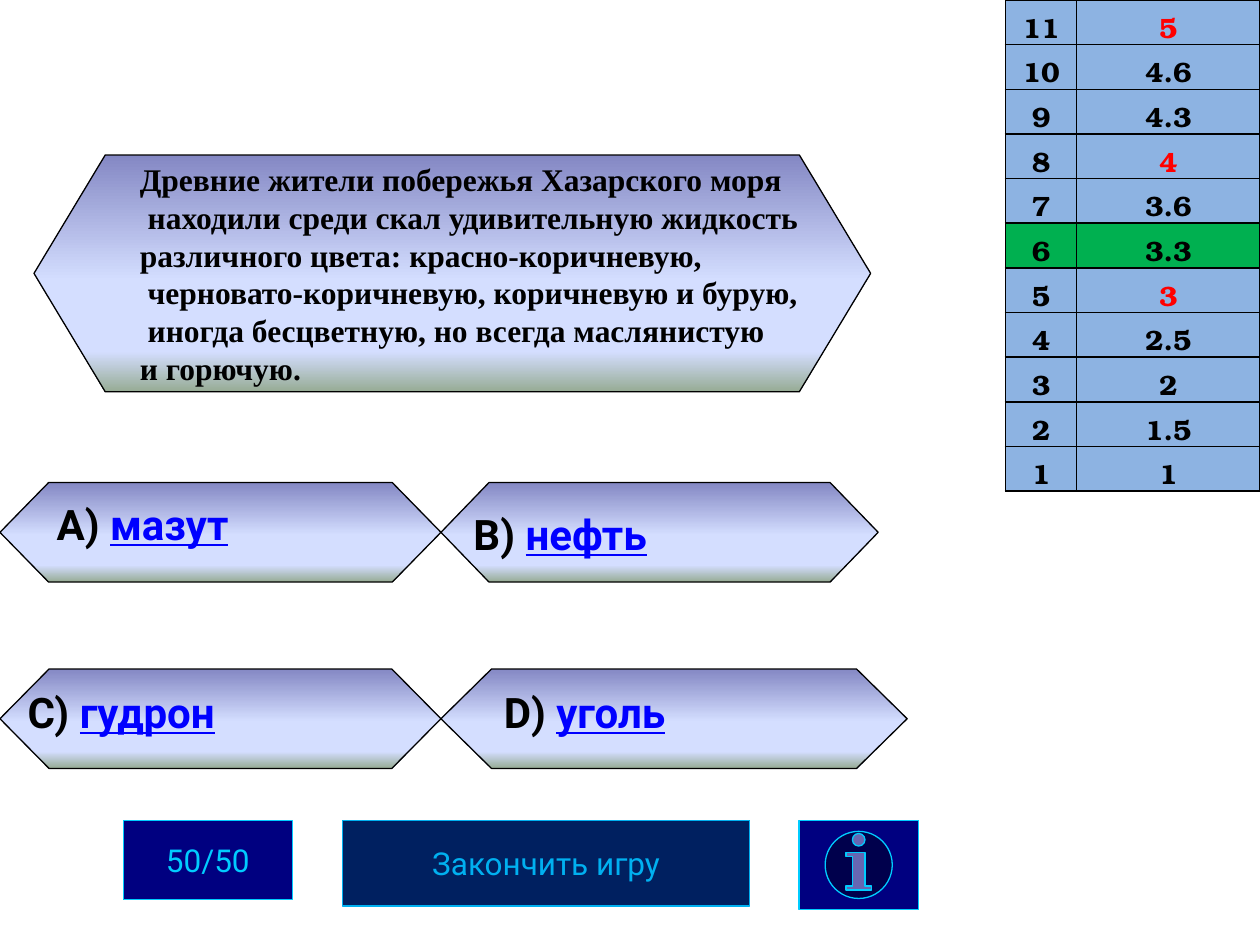
from lxml import etree
from pptx import Presentation
from pptx.dml.color import RGBColor
from pptx.enum.shapes import MSO_SHAPE as Shape
from pptx.enum.text import MSO_ANCHOR as Anchor, PP_ALIGN as Align
from pptx.oxml import parse_xml
from pptx.oxml.ns import nsdecls, qn
from pptx.util import Inches, Pt

WIDTH, HEIGHT = Inches(10), Inches(7.5)
BLACK, LINK, RED = "000000", "0000FF", "FF0000"
ROW_FILL, CURRENT_FILL = "8DB3E2", "00B050"
STOPS = [(0, "8488C4"), (53, "D4DEFF"), (83, "D4DEFF"), (100, "96AB94")]
QUESTION = [
    "Древние жители побережья Хазарского моря",
    " находили среди скал удивительную жидкость",
    "различного цвета: красно-коричневую,",
    " черновато-коричневую, коричневую и бурую,",
    " иногда бесцветную, но всегда маслянистую",
    "и горючую.",
]
SCORES = ["5", "4.6", "4.3", "4", "3.6", "3.3", "3", "2.5", "2", "1.5", "1"]
MILESTONES, CURRENT = {"5", "4", "3"}, "3.3"
ANSWERS = [
    ("А) ", "мазут", (0, 51.07, 35, 10.53), 0.489, (3.5, 1.07, 29.9)),
    ("В) ", "нефть", (35, 51.07, 34.7, 10.53), 0.483, (1.6, 2.13, 35.4)),
    ("С) ", "гудрон", (0, 70.8, 35, 10.53), 0.494, (1.2, 1.2, 36.2)),
    ("D) ", "уголь", (35, 70.8, 37, 10.53), 0.508, (4, 1.2, 29.9)),
]


def color(value):
    """Turn a hex string into a colour."""
    return RGBColor.from_string(value)


def place(box):
    """Turn a box in percent of the slide into lengths."""
    return [int(v * side / 100) for v, side in zip(box, (WIDTH, HEIGHT) * 2)]


def add_run(p, text, rgb, **formats):
    """Add a run with the given font values."""
    r = p.add_run()
    r.text = text
    r.font.color.rgb = color(rgb)
    for name, value in formats.items():
        setattr(r.font, name, value)


def add_outlined(s, kind, box, line):
    """Add a thinly outlined preset shape without a shadow."""
    sp = s.shapes.add_shape(kind, *place(box))
    sp.shadow.inherit = False
    sp.line.color.rgb = color(line)
    sp.line.width = Pt(0.75)
    return sp


def add_hexagon(s, box, adjustment):
    """Add a hexagon with the vertical gradient."""
    sp = add_outlined(s, Shape.HEXAGON, box, BLACK)
    sp.adjustments[0] = adjustment
    sp.fill.gradient()
    sp.fill.gradient_angle = 270
    stops = sp.element.spPr.find(".//" + qn("a:gsLst"))
    for stop in list(stops):
        stops.remove(stop)
    for position, rgb in STOPS:
        stops.append(parse_xml(
            f'<a:gs {nsdecls("a")} pos="{position * 1000}"><a:srgbClr val="{rgb}"/></a:gs>'))
    return sp


def add_question(s, box):
    """Add the question panel."""
    tf = add_hexagon(s, box, 0.301).text_frame
    tf.word_wrap = False
    tf.vertical_anchor = Anchor.MIDDLE
    for i, line in enumerate(QUESTION):
        p = tf.add_paragraph() if i else tf.paragraphs[0]
        p.alignment = Align.LEFT
        add_run(p, line, BLACK, size=Pt(18), name="Times New Roman", bold=True)


def add_answer(s, letter, word, box, adjustment, label):
    """Add an answer hexagon and its label, offset from the corner of the box."""
    add_hexagon(s, box, adjustment)
    dx, dy, width = label
    tf = s.shapes.add_textbox(*place((box[0] + dx, box[1] + dy, width, 6.67))).text_frame
    tf.word_wrap = True
    font = {"size": Pt(24), "name": "Roboto", "bold": True}
    add_run(tf.paragraphs[0], letter, BLACK, **font)
    add_run(tf.paragraphs[0], word, LINK, underline=True, **font)


def add_button(s, kind, box, fill, line, text=""):
    """Add an action button with an optional caption."""
    sp = add_outlined(s, kind, box, line)
    sp.fill.solid()
    sp.fill.fore_color.rgb = color(fill)
    if text:
        tf = sp.text_frame
        tf.word_wrap = False
        tf.vertical_anchor = Anchor.MIDDLE
        tf.paragraphs[0].alignment = Align.CENTER
        add_run(tf.paragraphs[0], text, line, size=Pt(18), name="Roboto")


def add_borders(cell):
    """Draw a black line on each side of a cell."""
    tc_pr = cell._tc.get_or_add_tcPr()
    for i, side in enumerate(("lnL", "lnR", "lnT", "lnB")):
        ln = etree.Element(qn("a:" + side), w=str(Pt(1)))
        fill = etree.SubElement(ln, qn("a:solidFill"))
        etree.SubElement(fill, qn("a:srgbClr"), val=BLACK)
        tc_pr.insert(i, ln)


def fill_cell(cell, text, fill, rgb):
    """Write and format one score cell."""
    margins = {"margin_left": Inches(0.07), "margin_right": Inches(0.07),
               "margin_top": 0, "margin_bottom": 0}
    for name, value in margins.items():
        setattr(cell, name, value)
    cell.fill.solid()
    cell.fill.fore_color.rgb = color(fill)
    add_borders(cell)
    p = cell.text_frame.paragraphs[0]
    formats = {"alignment": Align.CENTER, "line_spacing": 1.15, "space_after": Pt(10)}
    for name, value in formats.items():
        setattr(p, name, value)
    add_run(p, text, rgb, size=Pt(16), name="TeX Gyre Bonum", bold=True)


def add_scores(s, box):
    """Add the score ladder, highest level on top."""
    count = len(SCORES)
    table = s.shapes.add_table(count, 2, *place(box)).table
    table.first_row = table.horz_banding = False
    for column, share in zip(table.columns, (0.28, 0.72)):
        column.width = int(place(box)[2] * share)
    for i, score in enumerate(SCORES):
        fill = CURRENT_FILL if score == CURRENT else ROW_FILL
        fill_cell(table.cell(i, 0), str(count - i), fill, BLACK)
        fill_cell(table.cell(i, 1), score, fill, RED if score in MILESTONES else BLACK)


def main():
    """Build the quiz slide."""
    prs = Presentation()
    prs.slide_width, prs.slide_height = WIDTH, HEIGHT
    s = prs.slides.add_slide(prs.slide_layouts[6])
    add_question(s, (2.7, 16.4, 66.4, 25.07))
    for answer in ANSWERS:
        add_answer(s, *answer)
    add_scores(s, (79.8, 0, 20.2, 52))
    blank, info = Shape.ACTION_BUTTON_CUSTOM, Shape.ACTION_BUTTON_INFORMATION
    add_button(s, blank, (9.8, 86.8, 13.4, 8.4), "000080", "00CCFF", "50/50")
    add_button(s, blank, (27.2, 86.8, 32.3, 9.07), "002060", "00B0F0", "Закончить игру")
    add_button(s, info, (63.4, 86.8, 9.5, 9.47), "000080", "00CCFF")
    prs.save("out.pptx")


if __name__ == "__main__":
    main()
